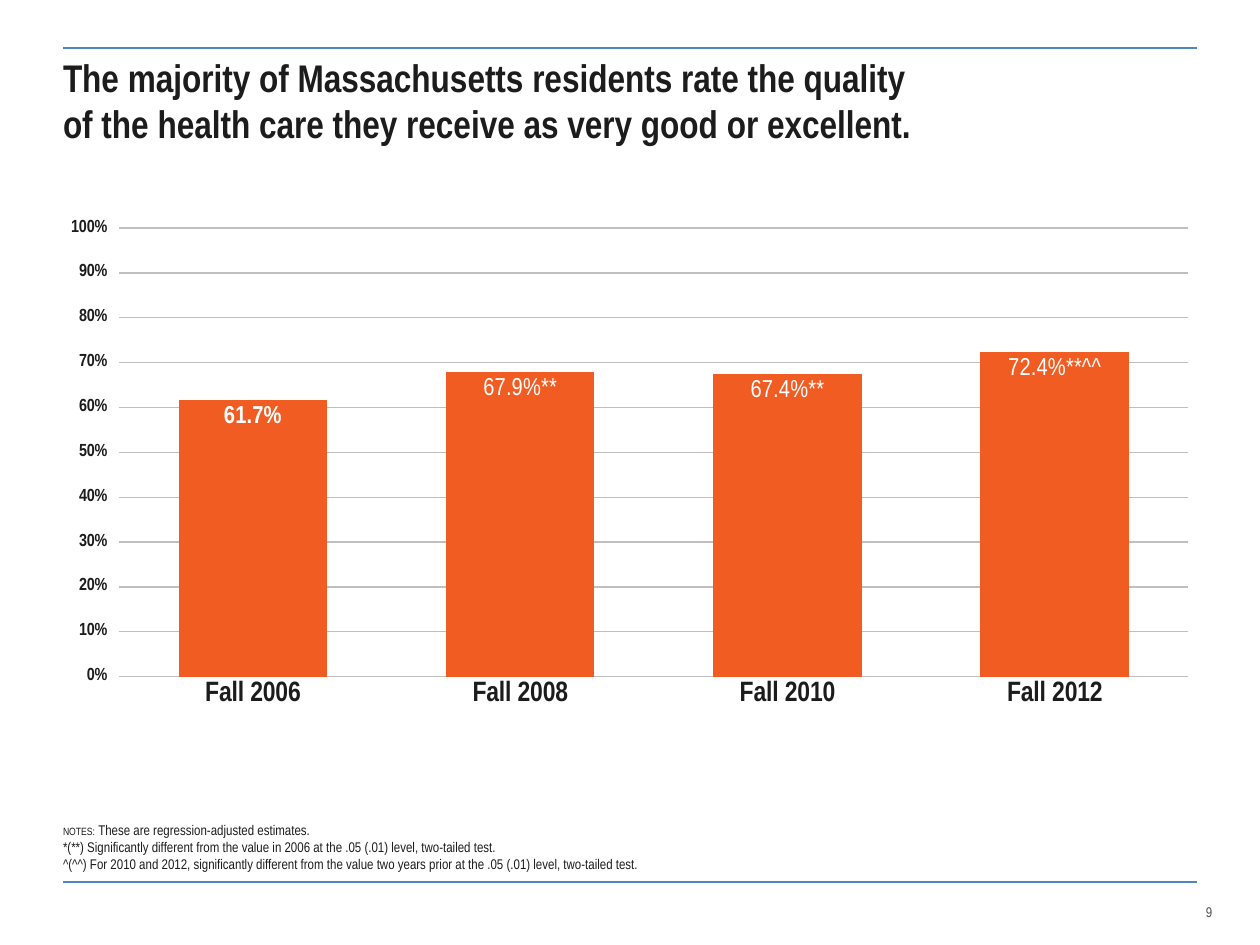
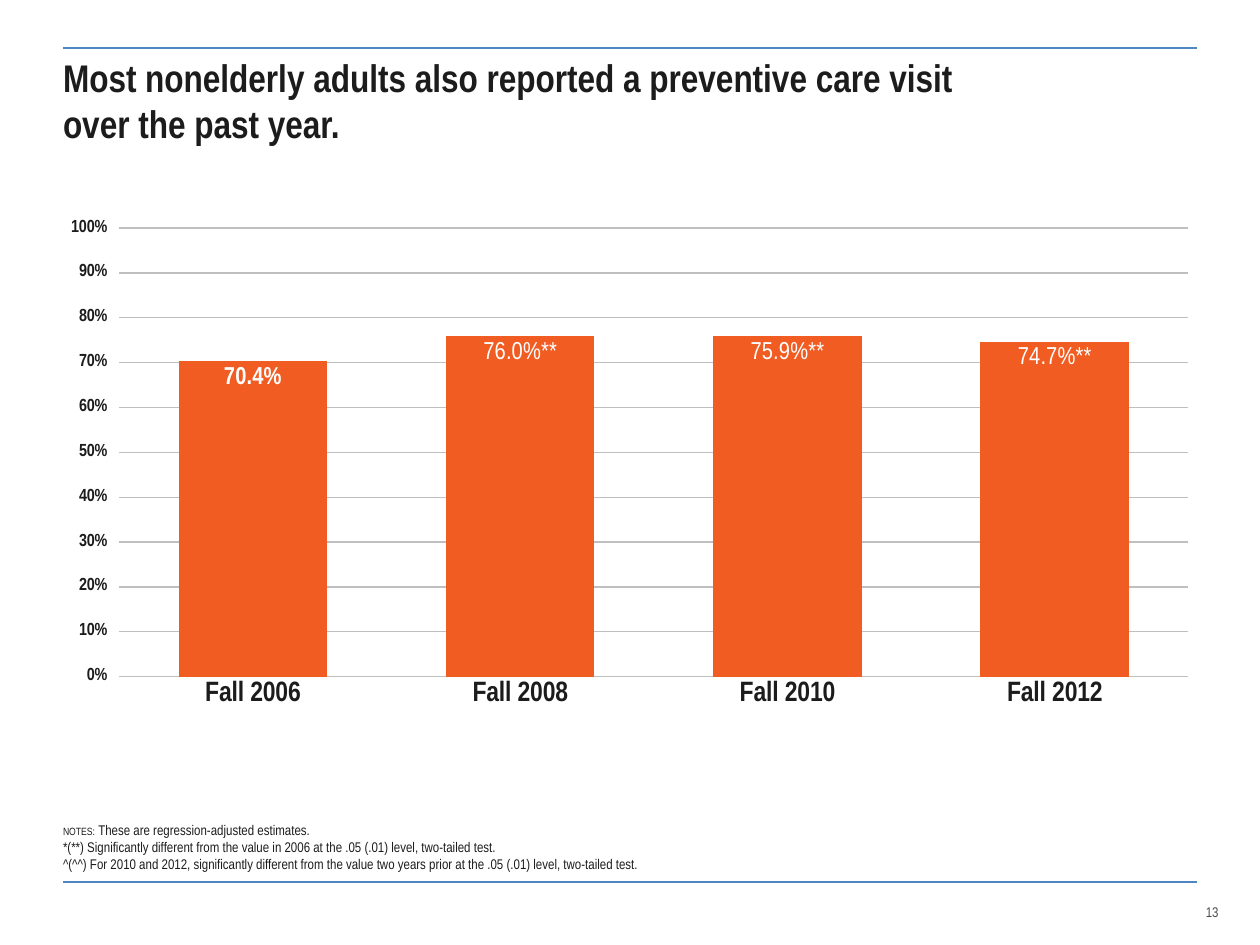
import pptx
import pptx.chart.data
import pptx.dml.color
import pptx.enum.chart
import pptx.enum.shapes
import pptx.enum.text
import pptx.oxml
import pptx.oxml.ns
import pptx.util
from pptx.util import Inches

COLORS = {
    "rule": "4D85C5",
    "ink": "1C1C1C",
    "black": "000000",
    "page": "4B4B4B",
    "bar": "F15C22",
    "white": "FFFFFF",
    "grid": "BFBFBF",
}
FONT = "Arial Narrow"
LEFT, RIGHT = 0.5, 9.5
TOP_RULE, BOTTOM_RULE = 0.38, 7
PLOT = {"x": 0.05, "y": 0.051, "w": 0.948, "h": 0.786}
SEASONS = ["Fall 2006", "Fall 2008", "Fall 2010", "Fall 2012"]
NOTES = [
    ("NOTES", 6, "ink"),
    (":", 6, "black"),
    (" ", 8, "black"),
    ("These are regression-adjusted estimates.\n"
     "*(**) Significantly different from the value in 2006 at the .05 (.01) level, "
     "two-tailed test.\n"
     "^(^^) For 2010 and 2012, significantly different from the value two years prior "
     "at the .05 (.01) level, two-tailed test.", 8, "ink"),
]
SLIDES = [
    {
        "title": "The majority of Massachusetts residents rate the quality \n"
                 "of the health care they receive as very good or excellent.",
        "page": "9",
        "values": [61.7, 67.9, 67.4, 72.4],
        "marks": ["", "**", "**", "**^^"],
    },
    {
        "title": "Most nonelderly adults also reported a preventive care visit \n"
                 "over the past year.",
        "page": "13",
        "values": [70.4, 76.0, 75.9, 74.7],
        "marks": ["", "**", "**", "**"],
    },
]


def rgb(name):
    return pptx.dml.color.RGBColor.from_string(COLORS[name])


def apply(target, formats):
    for name, value in formats.items():
        setattr(target, name, value)


def style_font(font, size, color="ink", bold=False):
    apply(font, {"name": FONT, "size": pptx.util.Pt(size), "bold": bold})
    font.color.rgb = rgb(color)


class SlideBuilder:
    def __init__(self, deck):
        self.deck = deck
        self.slide = None

    def start(self):
        self.slide = self.deck.slides.add_slide(self.deck.slide_layouts[5])

    def rule(self, top, width):
        line = self.slide.shapes.add_connector(
            pptx.enum.shapes.MSO_CONNECTOR.STRAIGHT,
            Inches(LEFT), Inches(top), Inches(RIGHT), Inches(top))
        line.line.color.rgb = rgb("rule")
        line.line.width = pptx.util.Pt(width)
        line._element.spPr.append(pptx.oxml.parse_xml(
            f'<a:effectLst {pptx.oxml.ns.nsdecls("a")}/>'))

    def fill_text(self, box, spans, anchor="TOP", inset=0.05, before=0, bold=False):
        """Write (text, size, color) spans into one paragraph; newlines become breaks."""
        frame = box.text_frame
        apply(frame, {
            "word_wrap": True,
            "auto_size": pptx.enum.text.MSO_AUTO_SIZE.NONE,
            "vertical_anchor": pptx.enum.text.MSO_ANCHOR[anchor],
            "margin_left": 0, "margin_right": 0,
            "margin_top": Inches(inset), "margin_bottom": Inches(inset),
        })
        para = frame.paragraphs[0]
        apply(para, {"alignment": pptx.enum.text.PP_ALIGN.LEFT,
                     "space_before": pptx.util.Pt(before)})
        for text, size, color in spans:
            for index, part in enumerate(text.split("\n")):
                if index:
                    para.add_line_break()
                span = para.add_run()
                span.text = part
                style_font(span.font, size, color, bold)

    def title(self, text):
        box = self.slide.shapes.title
        apply(box, {"left": Inches(LEFT), "top": Inches(TOP_RULE),
                    "width": Inches(RIGHT - LEFT), "height": Inches(0.87)})
        self.fill_text(box, [(text, 22, "ink")], bold=True)

    def text(self, left, top, width, height, spans, **formats):
        box = self.slide.shapes.add_textbox(
            Inches(left), Inches(top), Inches(width), Inches(height))
        self.fill_text(box, spans, **formats)

    def column_chart(self, values, marks):
        data = pptx.chart.data.CategoryChartData(number_format='0.0"%"')
        data.categories = SEASONS
        data.add_series("Series 1", values)
        chart = self.slide.shapes.add_chart(
            pptx.enum.chart.XL_CHART_TYPE.COLUMN_CLUSTERED,
            Inches(LEFT), Inches(1.58), Inches(8.95), Inches(4.53), data).chart
        apply(chart, {"has_legend": False, "has_title": False})
        style_font(chart.font, 8, bold=True)
        self.place_plot(chart)
        self.style_axes(chart)
        plot = chart.plots[0]
        apply(plot, {"gap_width": 80, "vary_by_categories": False})
        series = plot.series[0]
        series.format.fill.solid()
        series.format.fill.fore_color.rgb = rgb("bar")
        self.label_columns(series, values, marks)

    def place_plot(self, chart):
        area = chart._chartSpace.chart.plotArea
        for layout in area.findall(pptx.oxml.ns.qn("c:layout")):
            area.remove(layout)
        sizes = "".join(f'<c:{key} val="{value}"/>' for key, value in PLOT.items())
        area.insert(0, pptx.oxml.parse_xml(
            f'<c:layout {pptx.oxml.ns.nsdecls("c")}><c:manualLayout>'
            '<c:layoutTarget val="inner"/><c:xMode val="edge"/><c:yMode val="edge"/>'
            f'{sizes}</c:manualLayout></c:layout>'))

    def style_axes(self, chart):
        marks = pptx.enum.chart.XL_TICK_MARK
        for axis, size, tick in ((chart.category_axis, 16, marks.NONE),
                                 (chart.value_axis, 10, marks.OUTSIDE)):
            apply(axis, {"major_tick_mark": tick, "minor_tick_mark": marks.NONE})
            axis.format.line.fill.background()
            style_font(axis.tick_labels.font, size, bold=True)
        axis = chart.value_axis
        apply(axis, {"minimum_scale": 0, "maximum_scale": 100, "major_unit": 10,
                     "has_major_gridlines": True})
        apply(axis.tick_labels, {"number_format": '0"%"',
                                 "number_format_is_linked": False})
        grid = axis.major_gridlines.format.line
        grid.color.rgb = rgb("grid")
        grid.width = pptx.util.Pt(0.75)

    def label_columns(self, series, values, marks):
        """Show each value, with its significance marks where it has any."""
        inside_end = pptx.enum.chart.XL_LABEL_POSITION.INSIDE_END
        apply(series.data_labels, {
            "show_value": True, "position": inside_end,
            "number_format": '0.0"%"', "number_format_is_linked": False})
        style_font(series.data_labels.font, 14, "white", bold=True)
        for index, (value, mark) in enumerate(zip(values, marks)):
            if mark:
                label = series.points[index].data_label
                span = label.text_frame.paragraphs[0].add_run()
                span.text = f"{value:.1f}%{mark}"
                style_font(span.font, 14, "white")
                label.position = inside_end


def main():
    deck = pptx.Presentation()
    apply(deck, {"slide_width": Inches(10), "slide_height": Inches(7.5)})
    builder = SlideBuilder(deck)
    for content in SLIDES:
        builder.start()
        builder.rule(TOP_RULE, 1.5)
        builder.rule(BOTTOM_RULE, 1)
        builder.title(content["title"])
        builder.text(9.57, 7.17, 0.43, 0.32, [(content["page"], 8, "page")], inset=0)
        builder.column_chart(content["values"], content["marks"])
        builder.text(LEFT, 6.47, 6.48, 0.5, NOTES, anchor="BOTTOM", before=2)
    deck.save("out.pptx")


if __name__ == "__main__":
    main()
